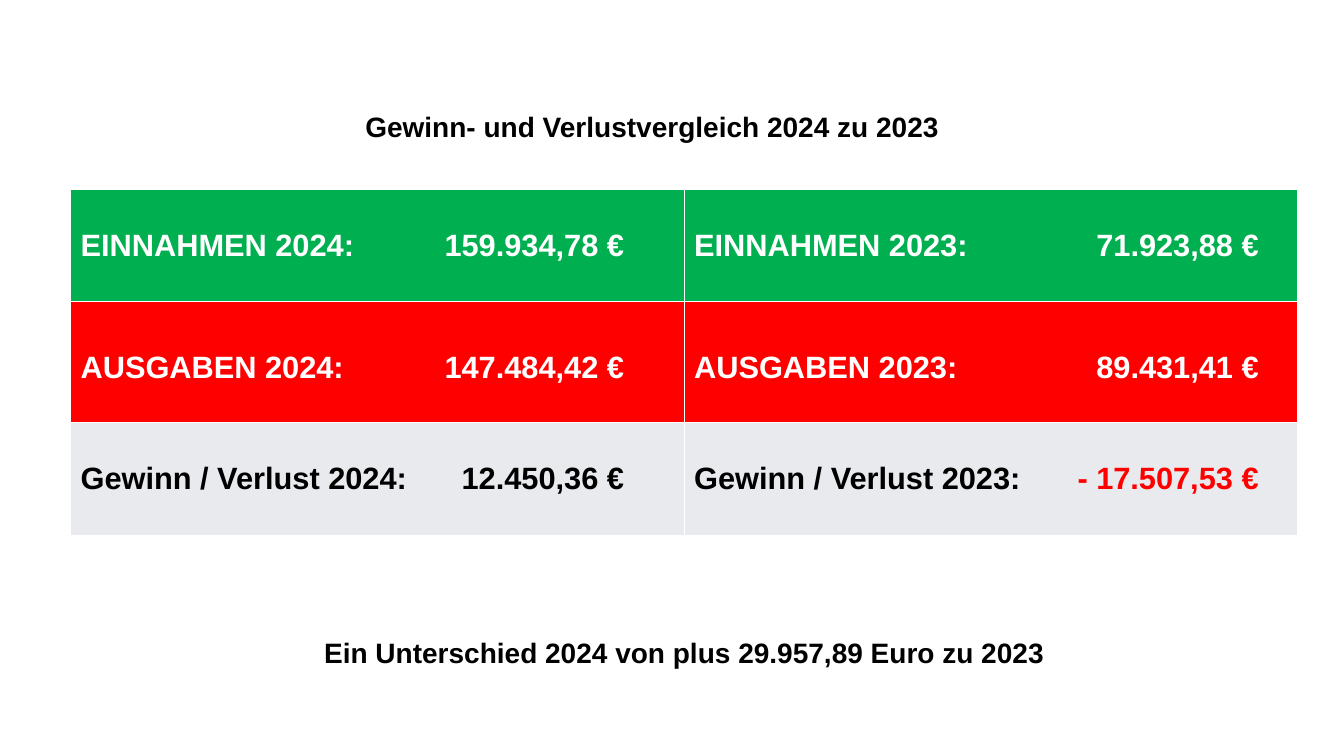
from lxml.etree import SubElement
from pptx import Presentation
from pptx.dml.color import RGBColor
from pptx.enum.text import MSO_ANCHOR as Anchor, PP_ALIGN as Align
from pptx.oxml import parse_xml
from pptx.oxml.ns import nsdecls, qn
from pptx.util import Emu, Inches, Pt

COLORS = {"income": "00B050", "expense": "FF0000", "result": "E8EAED",
          "light": "FFFFFF", "dark": "000000", "loss": "FF0000"}
WIDTH, HEIGHT = Inches(13.33), Inches(7.5)
AMOUNT_TABS = (5.39, 5.6)  # right edge of the amounts in each year's column

# fill, text colour, height, top inset, cells of (label, amount, amount colour)
ROWS = [
    ("income", "light", 1.12, 0.05,
     [("EINNAHMEN 2024:", "159.934,78 €", "light"),
      ("EINNAHMEN 2023:", "71.923,88 €", "light")]),
    ("expense", "light", 1.2, 0.15,
     [("AUSGABEN 2024:", "147.484,42 €", "light"),
      ("AUSGABEN 2023:", "89.431,41 €", "light")]),
    ("result", "dark", 1.12, 0.05,
     [("Gewinn / Verlust 2024:", "12.450,36 €", "dark"),
      ("Gewinn / Verlust 2023:", "- 17.507,53 €", "loss")]),
]


def rgb(name):
    return RGBColor.from_string(COLORS[name])


class ComparisonSlide:
    """Holds the slide and its style; places are shares of the slide's size."""
    font_name = "Arial"

    def __init__(self, deck):
        self.slide = deck.slides.add_slide(deck.slide_layouts[5])

    def box(self, left, top, width, height):
        return (Emu(int(WIDTH * left)), Emu(int(HEIGHT * top)),
                Emu(int(WIDTH * width)), Emu(int(HEIGHT * height)))

    def style(self, paragraph, size, color):
        font = paragraph.font
        font.name, font.size, font.bold = self.font_name, Pt(size), True
        font.color.rgb = rgb(color)

    def headline(self, shape, text):
        frame = shape.text_frame
        frame.word_wrap = True
        frame.vertical_anchor = Anchor.MIDDLE
        line = frame.paragraphs[0]
        line.text = text
        line.alignment = Align.CENTER
        self.style(line, 20, "dark")

    def title(self, text, place):
        heading = self.slide.shapes.title
        heading.left, heading.top, heading.width, heading.height = self.box(*place)
        self.headline(heading, text)

    def text(self, text, place):
        self.headline(self.slide.shapes.add_textbox(*self.box(*place)), text)

    def table(self, rows, place):
        table = self.slide.shapes.add_table(
            len(rows), len(AMOUNT_TABS), *self.box(*place)).table
        table.first_row = table.horz_banding = False
        for r, (fill, color, height, inset, entries) in enumerate(rows):
            table.rows[r].height = Inches(height)
            for c, entry in enumerate(entries):
                cell = table.cell(r, c)
                cell.margin_top = Inches(inset)
                self.cell(cell, fill, color, AMOUNT_TABS[c], *entry)

    def cell(self, cell, fill, color, tab, label, amount, amount_color):
        cell.vertical_anchor = Anchor.MIDDLE
        cell.fill.solid()
        cell.fill.fore_color.rgb = rgb(fill)
        self.borders(cell)
        line = cell.text_frame.paragraphs[0]
        stops = SubElement(line._p.get_or_add_pPr(), qn("a:tabLst"))
        SubElement(stops, qn("a:tab"), pos=str(Inches(tab)), algn="r")
        self.style(line, 22, color)
        line.add_run().text = label + "\t"
        value = line.add_run()
        value.text = amount
        if amount_color != color:
            value.font.color.rgb = rgb(amount_color)

    def borders(self, cell):
        """Draw thin light lines on all four sides, ahead of the fill element."""
        properties = cell._tc.get_or_add_tcPr()
        for place, side in enumerate("LRTB"):
            properties.insert(place, parse_xml(
                f'<a:ln{side} {nsdecls("a")} w="{Pt(1)}"><a:solidFill>'
                f'<a:srgbClr val="{COLORS["light"]}"/></a:solidFill></a:ln{side}>'))


def main():
    deck = Presentation()
    deck.slide_width, deck.slide_height = WIDTH, HEIGHT
    page = ComparisonSlide(deck)
    page.title("Gewinn- und Verlustvergleich 2024 zu 2023",
               (0.2325, 0.1373, 0.5056, 0.0587))
    page.table(ROWS, (0.0525, 0.25, 0.913, 0.4587))
    page.text("Ein Unterschied 2024 von plus 29.957,89 Euro zu 2023",
              (0.22, 0.8333, 0.5784, 0.0587))
    deck.save("out.pptx")


if __name__ == "__main__":
    main()
